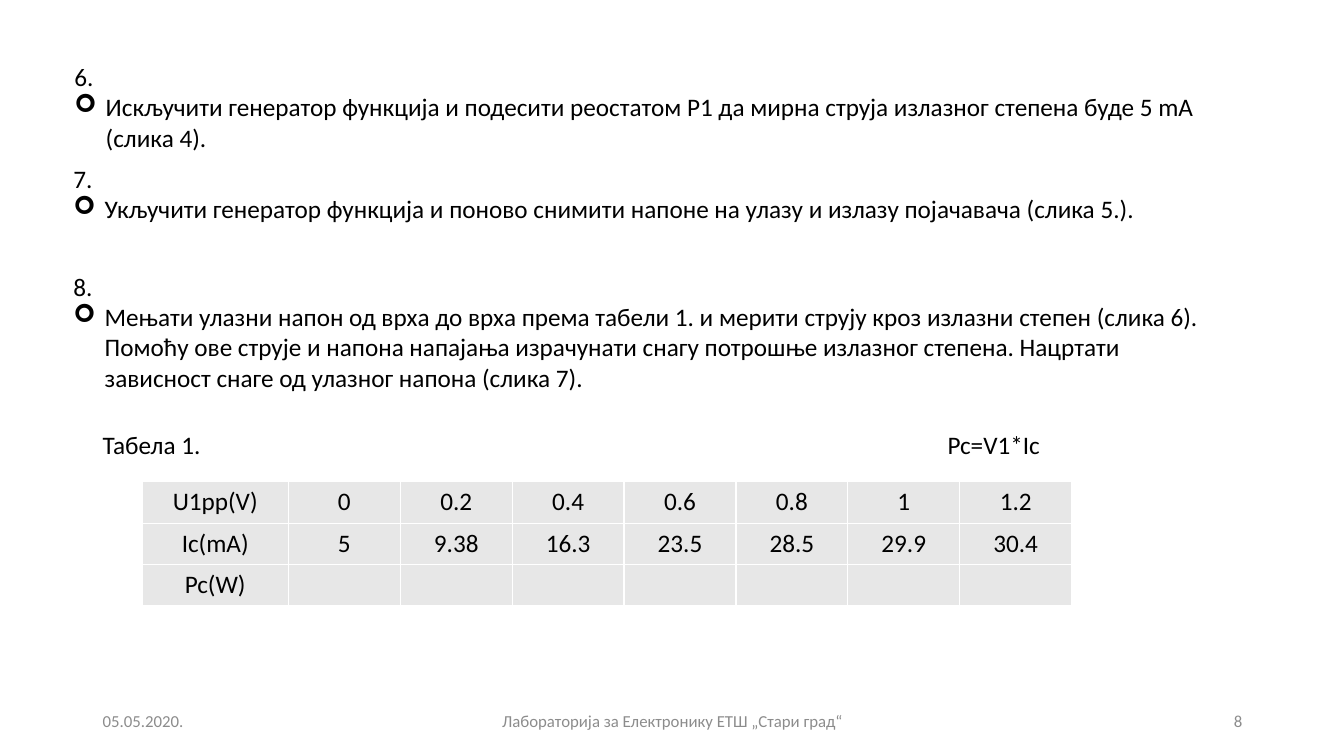
from pptx import Presentation
from pptx.dml.color import RGBColor
from pptx.enum.text import MSO_ANCHOR as Anchor, MSO_AUTO_SIZE as AutoSize, PP_ALIGN as Align
from pptx.oxml.ns import qn
from pptx.util import Pt
from lxml.etree import SubElement

PX = 9144
STEPS = [
    (64, 56, 1145, 101, "6.", "Искључити генератор функција и подесити реостатом P1 да мирна струја "
     "излазног степена буде 5 mA (слика 4)."),
    (63, 157, 1158, 71, "7.", "Укључити генератор функција и поново снимити напоне на улазу и излазу "
     "појачавача (слика 5.)."),
    (63, 264, 1158, 131, "8.", "Мењати улазни напон од врха до врха према табели 1. и мерити струју кроз "
     "излазни степен (слика 6). Помоћу ове струје и напона напајања израчунати снагу потрошње "
     "излазног степена. Нацртати зависност снаге од улазног напона (слика 7)."),
]
MEASUREMENTS = [
    ["U1pp(V)", "0", "0.2", "0.4", "0.6", "0.8", "1", "1.2"],
    ["Ic(mA)", "5", "9.38", "16.3", "23.5", "28.5", "29.9", "30.4"],
    ["Pc(W)"] + [""] * 7,
]
FOOTER = [
    (92, 300, "05.05.2020.", Align.LEFT),
    (442, 450, "Лабораторија за Електронику ЕТШ „Стари град“", Align.CENTER),
    (942, 300, "8", Align.RIGHT),
]


def rgb(color):
    """Turn a hex string into a colour."""
    return RGBColor.from_string(color)


class Page:
    """Holds the style and the current slide."""
    font = "Calibri"
    ink = "000000"
    muted = "8C8C8C"
    cell_fill = "E7E7E7"
    cell_line = "FFFFFF"

    def __init__(self, prs):
        self.s = prs.slides.add_slide(prs.slide_layouts[6])

    def style(self, p, size=18, color=ink, align=Align.LEFT):
        """Format a paragraph and its runs."""
        p.alignment = align
        for r in p.runs:
            r.font.name = self.font
            r.font.size = Pt(size)
            r.font.color.rgb = rgb(color)

    def text(self, x, y, w, h, text, wrap=True, **style):
        """Add a text box and return its frame."""
        tf = self.s.shapes.add_textbox(x * PX, y * PX, w * PX, h * PX).text_frame
        tf.word_wrap = wrap
        tf.auto_size = AutoSize.SHAPE_TO_FIT_TEXT
        tf.text = text
        for p in tf.paragraphs:
            self.style(p, **style)
        return tf

    def step(self, x, y, w, h, number, task):
        """Add a numbered step with a bulleted task."""
        tf = self.text(x, y, w, h, f"{number}\n{task}")
        pPr = tf.paragraphs[1]._p.get_or_add_pPr()
        pPr.set("marL", str(31 * PX))
        pPr.set("indent", str(-31 * PX))
        SubElement(pPr, qn("a:buFont"), typeface="Wingdings")
        SubElement(pPr, qn("a:buChar"), char="➢")

    def footer(self, x, w, text, align):
        """Add a footer text."""
        tf = self.text(x, 695, w, 40, text, size=12, color=self.muted, align=align)
        tf.auto_size = AutoSize.NONE
        tf.vertical_anchor = Anchor.MIDDLE

    def border(self, cell):
        """Draw a thin line on each side of a cell."""
        tcPr = cell._tc.get_or_add_tcPr()
        for side in "LRTB":
            ln = SubElement(tcPr, qn(f"a:ln{side}"), w=str(Pt(1)))
            fill = SubElement(ln, qn("a:solidFill"))
            SubElement(fill, qn("a:srgbClr"), val=self.cell_line)

    def table(self, x, y, widths, row_h, rows):
        """Add a table with uniform cells."""
        frame = self.s.shapes.add_table(len(rows), len(widths), x * PX, y * PX,
                                        sum(widths) * PX, row_h * len(rows) * PX)
        table = frame.table
        for column, width in zip(table.columns, widths):
            column.width = width * PX
        for row, values in zip(table.rows, rows):
            row.height = row_h * PX
            for cell, value in zip(row.cells, values):
                self.border(cell)
                cell.fill.solid()
                cell.fill.fore_color.rgb = rgb(self.cell_fill)
                cell.text = value
                self.style(cell.text_frame.paragraphs[0], align=Align.CENTER)


def main():
    """Build the slide."""
    prs = Presentation()
    prs.slide_width, prs.slide_height = 1333 * PX, 750 * PX
    page = Page(prs)
    for item in FOOTER:
        page.footer(*item)
    for item in STEPS:
        page.step(*item)
    page.table(141, 478, [145] + [111] * 7, 41, MEASUREMENTS)
    page.text(92, 421, 118, 40, "Табела 1.", wrap=False)
    page.text(930, 421, 125, 40, "Pc=V1*Ic")
    prs.save("out.pptx")


if __name__ == "__main__":
    main()
